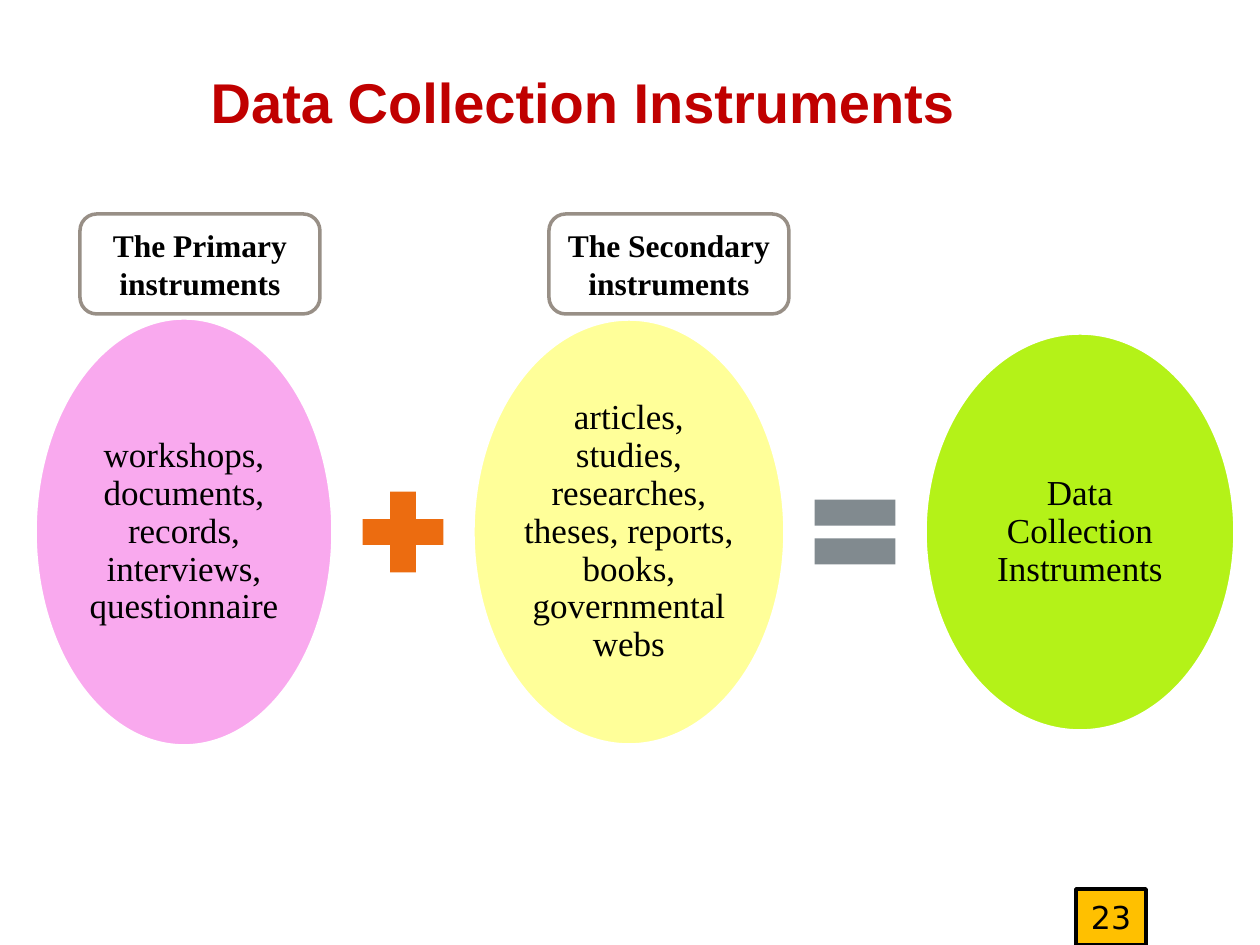
from pptx import Presentation
from pptx import util as u
from pptx.dml.color import RGBColor
from pptx.enum import shapes, text

PX = 914400 / 126
SHAPE = shapes.MSO_SHAPE
SERIF = "Times New Roman"
COLORS = {
    "title": "C00000", "text": "000000", "white": "FFFFFF",
    "primary": "F9A9EE", "secondary": "FFFF99", "result": "B4F218",
    "plus": "EC6C10", "equal": "818A8F", "label": "988F86", "number": "FFC000",
}


def px(n):
    return u.Emu(round(n * PX))


def color(name):
    return RGBColor.from_string(COLORS[name])


class Deck:
    def __init__(self):
        self.prs = Presentation()
        self.prs.slide_width, self.prs.slide_height = px(1260), px(945)
        self.s = self.prs.slides.add_slide(self.prs.slide_layouts[6])

    def set_text(self, sp, words, size, font=SERIF, bold=False, ink="text", spacing=1.0, inset=None):
        tf = sp.text_frame
        tf.word_wrap = True
        tf.vertical_anchor = text.MSO_ANCHOR.MIDDLE
        if inset is not None:
            tf.margin_left = tf.margin_right = tf.margin_top = tf.margin_bottom = px(inset)
        p = tf.paragraphs[0]
        p.text = words
        p.alignment = text.PP_ALIGN.CENTER
        p.line_spacing = spacing
        p.font.size, p.font.name, p.font.bold = u.Pt(size), font, bold
        p.font.color.rgb = color(ink)
        return tf

    def title(self, words, x, y, w, h, indent):
        sp = self.s.shapes.add_textbox(px(x), px(y), px(w), px(h))
        tf = self.set_text(sp, words, 32, "Arial", True, "title", 1.5)
        tf.vertical_anchor = text.MSO_ANCHOR.TOP
        tf.word_wrap = False
        p = tf.paragraphs[0]
        p.space_after = u.Pt(8)
        pPr = p._p.get_or_add_pPr()
        pPr.set("marL", str(px(indent)))
        pPr.set("indent", "0")

    def shape(self, kind, x, y, w, h, fill, line=None):
        sp = self.s.shapes.add_shape(kind, px(x), px(y), px(w), px(h))
        sp.shadow.inherit = False
        sp.fill.solid()
        sp.fill.fore_color.rgb = color(fill)
        if line:
            sp.line.color.rgb = color(line)
            sp.line.width = u.Pt(2)
        else:
            sp.line.fill.background()
        return sp

    def oval(self, words, x, mid, w, h, fill):
        sp = self.shape(SHAPE.OVAL, x, mid - h // 2, w, h, fill, "white")
        self.set_text(sp, words, 20, spacing=0.9, inset=4)

    def symbol(self, kind, x, mid, size, fill):
        self.shape(kind, x, mid - size // 2, size, size, fill)

    def label(self, words, x, y, w, h):
        sp = self.shape(SHAPE.ROUNDED_RECTANGLE, x, y, w, h, "white", "label")
        self.set_text(sp, words, 18, bold=True, inset=9)

    def number(self, words, x, y, w, h):
        sp = self.shape(SHAPE.RECTANGLE, x, y, w, h, "number", "text")
        self.set_text(sp, words, 18, "DejaVu Sans")


def main():
    d = Deck()
    d.title("Data Collection Instruments", 132, 28, 839, 102, 63)

    mid, gap, size = 532, 15, 110
    ovals = [
        ("workshops, documents, records, interviews, questionnaire", 298, 428, "primary"),
        ("articles, studies, researches, theses, reports, books, governmental webs",
         312, 426, "secondary"),
        ("Data Collection Instruments", 310, 398, "result"),
    ]
    symbols = [(SHAPE.MATH_PLUS, "plus"), (SHAPE.MATH_EQUAL, "equal")]
    x = 35
    for i, (words, w, h, fill) in enumerate(ovals):
        d.oval(words, x, mid, w, h, fill)
        x += w + gap
        if i < len(symbols):
            kind, ink = symbols[i]
            d.symbol(kind, x, mid, size, ink)
            x += size + gap

    d.number("23", 1076, 889, 70, 56)
    for words, left in [("The Primary instruments", 80), ("The Secondary instruments", 549)]:
        d.label(words, left, 214, 240, 100)

    d.prs.save("out.pptx")


if __name__ == "__main__":
    main()
